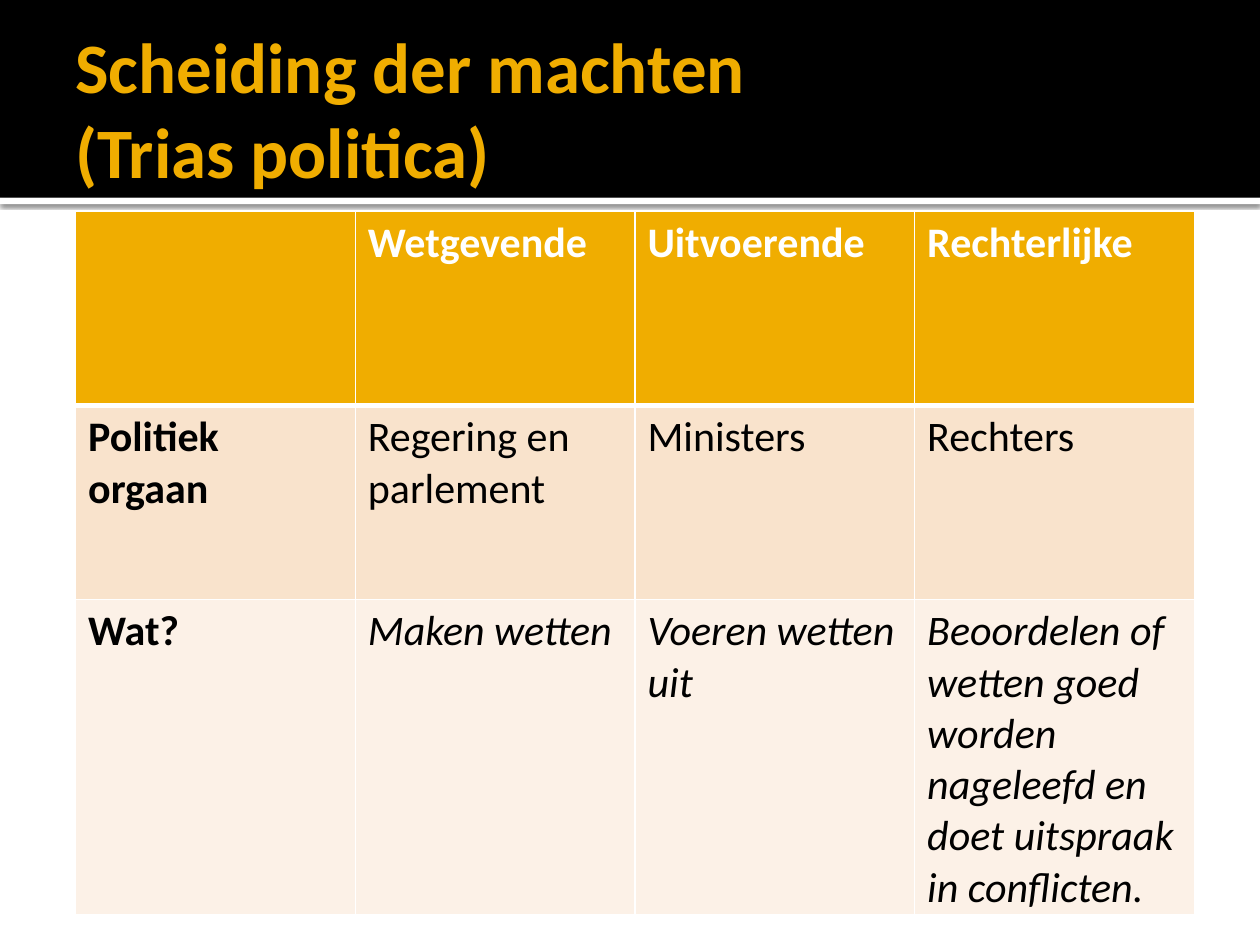
from dataclasses import dataclass

from lxml import etree
from pptx import Presentation
from pptx import util as u
from pptx.dml.color import RGBColor
from pptx.enum import shapes, text
from pptx.oxml import ns


@dataclass(frozen=True)
class Theme:
    font: str = "Calibri"
    accent: str = "F0AD00"
    dark: str = "000000"
    light: str = "FFFFFF"
    band: str = "F9E3CC"
    pale: str = "FCF1E7"
    title_size: float = 40.5
    cell_size: float = 24


HEADER = ["", "Wetgevende", "Uitvoerende", "Rechterlijke"]
ORGANS = ["Politiek orgaan", "Regering en parlement", "Ministers", "Rechters"]
TASKS = ["Wat?", "Maken wetten", "Voeren wetten uit",
         "Beoordelen of wetten goed worden nageleefd en doet uitspraak in conflicten."]


class SlideBuilder:
    def __init__(self, slide, theme):
        self.slide = slide
        self.theme = theme

    def style(self, tf, size, color, bold=False, italic=False):
        for p in tf.paragraphs:
            for r in p.runs:
                r.font.name = self.theme.font
                r.font.size = u.Pt(size)
                r.font.bold = bold
                r.font.italic = italic
                r.font.color.rgb = RGBColor.from_string(color)

    def bar(self, top, height, color):
        sp = self.slide.shapes.add_shape(
            shapes.MSO_SHAPE.RECTANGLE, 0, u.Inches(top), u.Inches(10), u.Inches(height))
        sp.fill.solid()
        sp.fill.fore_color.rgb = RGBColor.from_string(color)
        sp.line.fill.background()
        sp.shadow.inherit = False
        return sp

    def drop_shadow(self, sp, blur, distance, opacity):
        """Cast a shadow straight down; blur and distance in points, opacity in percent."""
        effects = sp._element.spPr.find(ns.qn("a:effectLst"))
        shadow = etree.SubElement(
            effects, ns.qn("a:outerShdw"), blurRad=str(u.Pt(blur)),
            dist=str(u.Pt(distance)), dir="5400000", algn="t", rotWithShape="0")
        color = etree.SubElement(shadow, ns.qn("a:srgbClr"), val=self.theme.dark)
        etree.SubElement(color, ns.qn("a:alpha"), val=str(opacity * 1000))

    def title(self, content, left, top, width, height):
        box = self.slide.shapes.add_textbox(*map(u.Inches, (left, top, width, height)))
        tf = box.text_frame
        tf.word_wrap = True
        tf.vertical_anchor = text.MSO_ANCHOR.MIDDLE
        tf.margin_right = u.Inches(0.05)
        tf.text = content
        self.style(tf, self.theme.title_size, self.theme.accent, bold=True)

    def borders(self, cell, bottom):
        tc_pr = cell._tc.get_or_add_tcPr()
        sides = {"lnL": 1, "lnR": 1, "lnT": 1, "lnB": bottom}
        for i, (side, width) in enumerate(sides.items()):
            ln = etree.Element(ns.qn(f"a:{side}"), w=str(u.Pt(width)))
            fill = etree.SubElement(ln, ns.qn("a:solidFill"))
            etree.SubElement(fill, ns.qn("a:srgbClr"), val=self.theme.light)
            tc_pr.insert(i, ln)

    def table(self, rows, left, top, col_width, heights):
        """Rows hold (texts, fill, text colour, italic body, bottom border)."""
        cols = len(rows[0][0])
        table = self.slide.shapes.add_table(
            len(rows), cols, u.Inches(left), u.Inches(top),
            u.Inches(col_width * cols), u.Inches(sum(heights))).table
        for col in table.columns:
            col.width = u.Inches(col_width)
        for r, (texts, fill, color, italic, bottom) in enumerate(rows):
            table.rows[r].height = u.Inches(heights[r])
            for c, content in enumerate(texts):
                cell = table.cell(r, c)
                cell.fill.solid()
                cell.fill.fore_color.rgb = RGBColor.from_string(fill)
                cell.text_frame.text = content
                self.style(cell.text_frame, self.theme.cell_size, color,
                           bold=r == 0 or c == 0, italic=italic and c > 0)
                # The rule under the header belongs to both rows it separates.
                self.borders(cell, bottom)
                if r == 1:
                    top_line = cell._tc.tcPr.find(ns.qn("a:lnT"))
                    top_line.set("w", str(u.Pt(rows[0][4])))


def main():
    prs = Presentation()
    prs.slide_width, prs.slide_height = u.Inches(10), u.Inches(7.5)
    theme = Theme()
    page = SlideBuilder(prs.slides.add_slide(prs.slide_layouts[6]), theme)

    strip = page.bar(1.57, 0.05, theme.light)
    page.drop_shadow(strip, blur=2.5, distance=0.8, opacity=60)
    page.bar(0, 1.57, theme.dark)
    page.title("Scheiding der machten\v(Trias politica)", 0.5, 0.17, 9, 1.37)
    page.table(
        [(HEADER, theme.accent, theme.light, False, 3),
         (ORGANS, theme.band, theme.dark, False, 1),
         (TASKS, theme.pale, theme.dark, True, 1)],
        left=0.6, top=1.68, col_width=2.22, heights=[1.54, 1.54, 2.5])
    prs.save("out.pptx")


if __name__ == "__main__":
    main()
